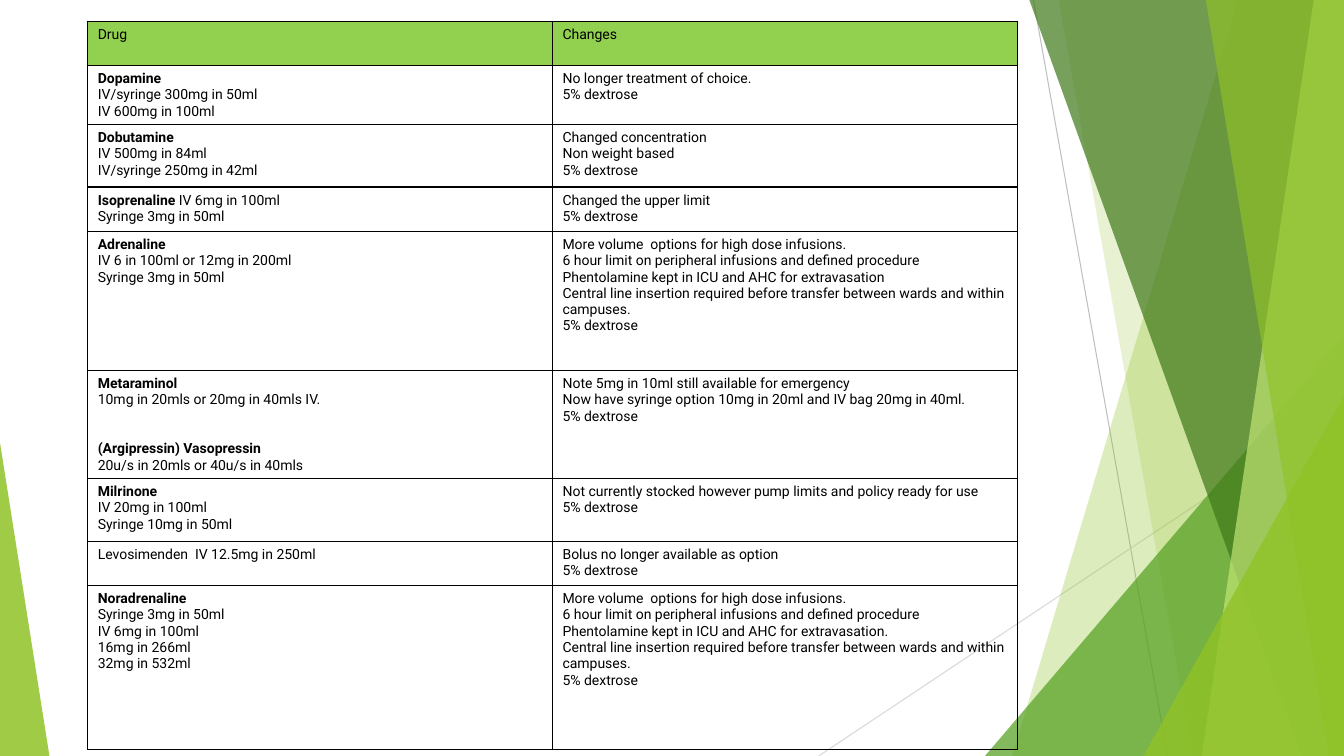
from dataclasses import dataclass

from lxml import etree
from pptx import Presentation
from pptx.dml import color
from pptx.enum import shapes, text
from pptx.oxml import ns
from pptx.util import Emu, Inches, Pt

prs = Presentation()
prs.slide_width, prs.slide_height = Inches(13.33), Inches(7.5)
s = prs.slides.add_slide(prs.slide_layouts[6])

Point = tuple[float, float]


@dataclass
class Ray:
    start: Point
    end: Point
    hue: str


@dataclass
class Band:
    """Slanted strip running from its left edge to the slide's right edge."""
    top: float
    bottom: float
    hue: str
    opacity: int


@dataclass
class Wedge:
    """Right triangle standing on the slide's bottom edge."""
    left: float
    top: float
    width: float
    apex: int
    hue: str
    opacity: int


@dataclass
class Line:
    bold: str = ""
    plain: str = ""
    space: float = 0


@dataclass
class Row:
    height: float
    drug: list[Line]
    changes: str
    fill: str = ""


# Lengths are percentages of the slide's width and height
def across(share: float) -> Emu:
    return Emu(round(prs.slide_width * share / 100))


def down(share: float) -> Emu:
    return Emu(round(prs.slide_height * share / 100))


def rgb(value: str) -> color.RGBColor:
    return color.RGBColor.from_string(value)


def add(parent, tag: str, **attrs: str):
    return etree.SubElement(parent, ns.qn(tag), attrs)


def paint(sp, hue: str, opacity: int) -> None:
    sp.shadow.inherit = False
    sp.line.fill.background()
    sp.fill.solid()
    sp.fill.fore_color.rgb = rgb(hue)
    srgb = sp.fill._xPr.find(".//" + ns.qn("a:srgbClr"))
    add(srgb, "a:alpha", val=str(opacity * 1000))


def draw_ray(ray: Ray) -> None:
    (x1, y1), (x2, y2) = ray.start, ray.end
    sp = s.shapes.add_connector(shapes.MSO_CONNECTOR.STRAIGHT,
                                across(x1), down(y1), across(x2), down(y2))
    sp.line.color.rgb = rgb(ray.hue)
    sp.line.width = Pt(0.75)
    add(sp._element.spPr, "a:effectLst")


def draw_band(band: Band) -> None:
    builder = s.shapes.build_freeform(across(band.top), 0)
    builder.add_line_segments([(across(100), 0), (across(100), down(100)),
                               (across(band.bottom), down(100))])
    paint(builder.convert_to_shape(), band.hue, band.opacity)


def draw_wedge(wedge: Wedge) -> None:
    sp = s.shapes.add_shape(shapes.MSO_SHAPE.ISOSCELES_TRIANGLE,
                            across(wedge.left), down(wedge.top),
                            across(wedge.width), down(100 - wedge.top))
    sp.adjustments[0] = wedge.apex
    paint(sp, wedge.hue, wedge.opacity)


def write_cell(cell, lines: list[Line], fill: str) -> None:
    tf = cell.text_frame
    tf.text = "\n".join(line.bold or line.plain for line in lines)
    for p, line in zip(tf.paragraphs, lines):
        p.alignment = text.PP_ALIGN.LEFT
        p.space_before = Pt(line.space)
        p.runs[0].font.bold = bool(line.bold)
        if line.bold and line.plain:
            p.add_run().text = line.plain
        for r in p.runs:
            r.font.name, r.font.size = "Roboto", Pt(10)
            r.font.color.rgb = rgb("000000")
    # Borders come before the fill in the cell's properties
    tcPr = cell._tc.get_or_add_tcPr()
    for side in ("a:lnL", "a:lnR", "a:lnT", "a:lnB"):
        ln = add(tcPr, side, w=str(Pt(1)))
        add(add(ln, "a:solidFill"), "a:srgbClr", val="000000")
    if fill:
        cell.fill.solid()
        cell.fill.fore_color.rgb = rgb(fill)
    else:
        cell.fill.background()


def draw_table(rows: list[Row], left: float, top: float, col: float) -> None:
    height = sum(row.height for row in rows)
    table = s.shapes.add_table(len(rows), 2, across(left), down(top),
                               across(2 * col), down(height)).table
    table.first_row = table.horz_banding = False
    for column in table.columns:
        column.width = across(col)
    for i, row in enumerate(rows):
        table.rows[i].height = down(row.height)
        changes = [Line(plain=change) for change in row.changes.split("\n")]
        write_cell(table.cell(i, 0), row.drug, row.fill)
        write_cell(table.cell(i, 1), changes, row.fill)


def dosing(name: str, *doses: str) -> list[Line]:
    return [Line(bold=name)] + [Line(plain=dose) for dose in doses]


def high_dose(stop: str) -> str:
    return ("More volume  options for high dose infusions.\n"
            "6 hour limit on peripheral infusions and defined procedure\n"
            f"Phentolamine kept in ICU and AHC for extravasation{stop}\n"
            "Central line insertion required before transfer between wards "
            "and within campuses.\n5% dextrose")


# Background facets, back to front
FACETS = [
    Ray((76.9, 0), (86.87, 100), "BFBFBF"),
    Ray((100, 53.73), (60.92, 100), "D9D9D9"),
    Band(92.12, 75.32, "90C226", 30),
    Band(78.77, 88.75, "90C226", 20),
    Wedge(73.29, 44.4, 26.71, 1, "54A021", 72),
    Band(76.59, 96.85, "3F7819", 70),
    Band(97.75, 89.42, "C0E474", 70),
    Band(89.72, 98.87, "90C226", 65),
    Wedge(85.07, 52.4, 14.93, 1, "90C226", 80),
    Wedge(0, 58.53, 3.68, 0, "90C226", 85),
]
DRAW = {Ray: draw_ray, Band: draw_band, Wedge: draw_wedge}
for facet in FACETS:
    DRAW[type(facet)](facet)

# Drug table
ROWS = [
    Row(5.87, [Line(plain="Drug")], "Changes", "92D050"),
    Row(7.8, dosing("Dopamine", "IV/syringe 300mg in 50ml", "IV 600mg in 100ml"),
        "No longer treatment of choice.\n5% dextrose"),
    Row(8.27, dosing("Dobutamine", "IV 500mg in 84ml", "IV/syringe 250mg in 42ml"),
        "Changed concentration\nNon weight based\n5% dextrose"),
    Row(5.87, [Line("Isoprenaline", " IV 6mg in 100ml"),
               Line(plain="Syringe 3mg in 50ml")],
        "Changed the upper limit\n5% dextrose"),
    Row(18.4, dosing("Adrenaline", "IV 6 in 100ml or 12mg in 200ml",
                     "Syringe 3mg in 50ml"), high_dose("")),
    Row(14.3, dosing("Metaraminol", "10mg in 20mls or 20mg in 40mls IV.")
        + [Line("(Argipressin) Vasopressin", space=23.4),
           Line(plain="20u/s in 20mls or 40u/s in 40mls")],
        "Note 5mg in 10ml still available for emergency\n"
        "Now have syringe option 10mg in 20ml and IV bag 20mg in 40ml.\n"
        "5% dextrose"),
    Row(8.27, dosing("Milrinone", "IV 20mg in 100ml", "Syringe 10mg in 50ml"),
        "Not currently stocked however pump limits and policy ready for use\n"
        "5% dextrose"),
    Row(5.87, [Line(plain="Levosimenden  IV 12.5mg in 250ml")],
        "Bolus no longer available as option\n5% dextrose"),
    Row(21.73, dosing("Noradrenaline", "Syringe 3mg in 50ml", "IV 6mg in 100ml",
                      "16mg in 266ml", "32mg in 532ml"), high_dose(".")),
]
draw_table(ROWS, left=6.53, top=2.8, col=34.58)

prs.save("out.pptx")
